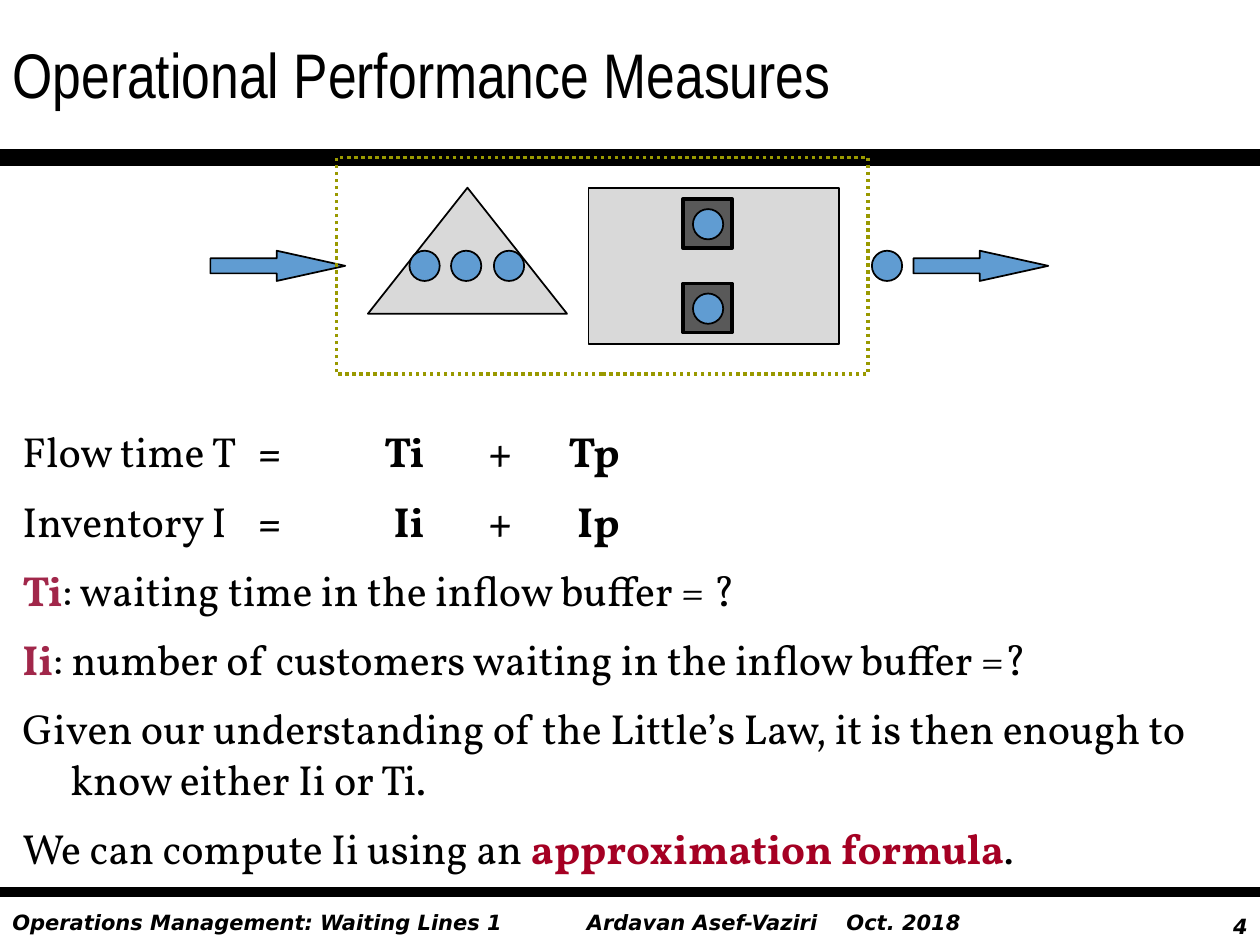
"""Build the slide on operational performance measures of a waiting line."""
from pptx import Presentation
from pptx.dml.color import RGBColor
from pptx.enum.dml import MSO_LINE
from pptx.enum.shapes import MSO_CONNECTOR, MSO_SHAPE
from pptx.enum.text import MSO_ANCHOR, PP_ALIGN
from pptx.oxml.ns import qn
from pptx.util import Inches, Pt
from lxml import etree

RECT, OVAL = MSO_SHAPE.RECTANGLE, MSO_SHAPE.OVAL
ARROW, TRIANGLE = MSO_SHAPE.RIGHT_ARROW, MSO_SHAPE.ISOSCELES_TRIANGLE
BLACK, GREY, DARK, BLUE, OLIVE = "000000", "D9D9D9", "595959", "609CD2", "999900"
ROSE, RED = "A1274A", "A50023"

TITLE = "Operational Performance Measures"
FOOTERS = [
    ("4", 9.25, 7.2, 0.75, PP_ALIGN.RIGHT, []),
    ("Ardavan Asef-Vaziri\tOct. 2018", 4.56, 7.17, 3.35, PP_ALIGN.LEFT, [(2.06, "l")]),
    ("Operations Management: Waiting Lines 1", 0, 7.17, 4.67, PP_ALIGN.LEFT, []),
]
RULES = [(1.25, 10), (7.08, 6)]
EQUATION_TABS = [(1.87, "l"), (3.19, "r"), (3.7, "l"), (4.74, "r")]
EQUATIONS = [
    [("Flow time T", BLACK, False), ("\t=\tTi\t+\tTp", BLACK, True)],
    [("Inventory I", BLACK, False), ("\t=\tIi\t+\tIp", BLACK, True)],
]
NOTES = [
    [("Ti", ROSE, True), (": waiting time in the inflow buffer = ?", BLACK, False)],
    [("Ii", ROSE, True),
     (": number of customers waiting in the inflow buffer =?", BLACK, False)],
    [("Given our understanding of the Little’s Law, it is then enough to "
      "know either Ii or Ti.", BLACK, False)],
    [("We can compute Ii using an ", BLACK, False),
     ("approximation formula", RED, True), (".", BLACK, False)],
]
SERVER_TOPS = [1.58, 2.25]
FLOW_TOP, UNIT = 1.99, 0.24
CUSTOMERS = [(x, FLOW_TOP) for x in (3.25, 3.58, 3.92)]
CUSTOMERS += [(5.5, top + 0.08) for top in SERVER_TOPS] + [(6.92, FLOW_TOP)]
ARROW_LEFTS = [7.25, 1.67]


def rgb(color):
    return RGBColor.from_string(color)


def set_font(font, name, size, color=BLACK, bold=False, italic=False):
    font.name, font.size = name, Pt(size)
    font.color.rgb = rgb(color)
    font.bold, font.italic = bold, italic


def set_tabs(p, tabs):
    tab_list = etree.SubElement(p._p.get_or_add_pPr(), qn("a:tabLst"))
    for pos, align in tabs:
        etree.SubElement(tab_list, qn("a:tab"), pos=str(Inches(pos)), algn=align)


def add_text_frame(s, x, y, w, h):
    tf = s.shapes.add_textbox(Inches(x), Inches(y), Inches(w), Inches(h)).text_frame
    tf.word_wrap = True
    return tf


def add_shape(s, kind, x, y, w, h, fill=None, line=BLACK, width=1):
    sp = s.shapes.add_shape(kind, Inches(x), Inches(y), Inches(w), Inches(h))
    sp.shadow.inherit = False
    if fill:
        sp.fill.solid()
        sp.fill.fore_color.rgb = rgb(fill)
    else:
        sp.fill.background()
    sp.line.color.rgb = rgb(line)
    sp.line.width = Pt(width)
    return sp


def add_frame(s):
    for text, x, y, w, align, tabs in FOOTERS:
        p = add_text_frame(s, x, y, w, 0.3).paragraphs[0]
        p.text, p.alignment = text, align
        if tabs:
            set_tabs(p, tabs)
        set_font(p.font, "DejaVu Sans", 12, bold=True, italic=True)
    for y, width in RULES:
        line = s.shapes.add_connector(
            MSO_CONNECTOR.STRAIGHT, 0, Inches(y), Inches(10), Inches(y))
        line.line.color.rgb = rgb(BLACK)
        line.line.width = Pt(width)
        etree.SubElement(line._element.spPr, qn("a:effectLst"))
    tf = add_text_frame(s, 0, 0, 10, 1.17)
    tf.vertical_anchor = MSO_ANCHOR.MIDDLE
    p = tf.paragraphs[0]
    p.text = TITLE
    set_font(p.font, "Arial Narrow", 36)


def add_process(s):
    add_shape(s, TRIANGLE, 2.92, 1.49, 1.58, 1, GREY)
    add_shape(s, RECT, 4.67, 1.49, 1.99, 1.24, GREY)
    for top in SERVER_TOPS:
        add_shape(s, RECT, 5.42, top, 0.39, 0.39, DARK, width=2)
    for x, y in CUSTOMERS:
        add_shape(s, OVAL, x, y, UNIT, UNIT, BLUE)
    for x in ARROW_LEFTS:
        sp = add_shape(s, ARROW, x, FLOW_TOP, 1.07, UNIT, BLUE)
        sp.adjustments[0], sp.adjustments[1] = 0.5, 2.265
    sp = add_shape(s, RECT, 2.67, 1.25, 4.22, 1.72, line=OLIVE, width=2)
    sp.line.dash_style = MSO_LINE.ROUND_DOT


def add_body(s):
    tf = add_text_frame(s, 0.08, 3.33, 9.75, 3.75)
    for i, runs in enumerate(EQUATIONS + NOTES):
        p = tf.add_paragraph() if i else tf.paragraphs[0]
        p.space_before, p.space_after = Pt(4.8 if i else 0), Pt(6)
        if i < len(EQUATIONS):
            set_tabs(p, EQUATION_TABS)
        else:
            pPr = p._p.get_or_add_pPr()
            pPr.set("marL", str(Inches(0.38)))
            pPr.set("indent", str(Inches(-0.38)))
        for text, color, bold in runs:
            r = p.add_run()
            r.text = text
            set_font(r.font, "Vollkorn", 24, color, bold)


def main():
    prs = Presentation()
    prs.slide_width, prs.slide_height = Inches(10), Inches(7.5)
    s = prs.slides.add_slide(prs.slide_layouts[6])
    add_frame(s)
    add_process(s)
    add_body(s)
    prs.save("out.pptx")


if __name__ == "__main__":
    main()
